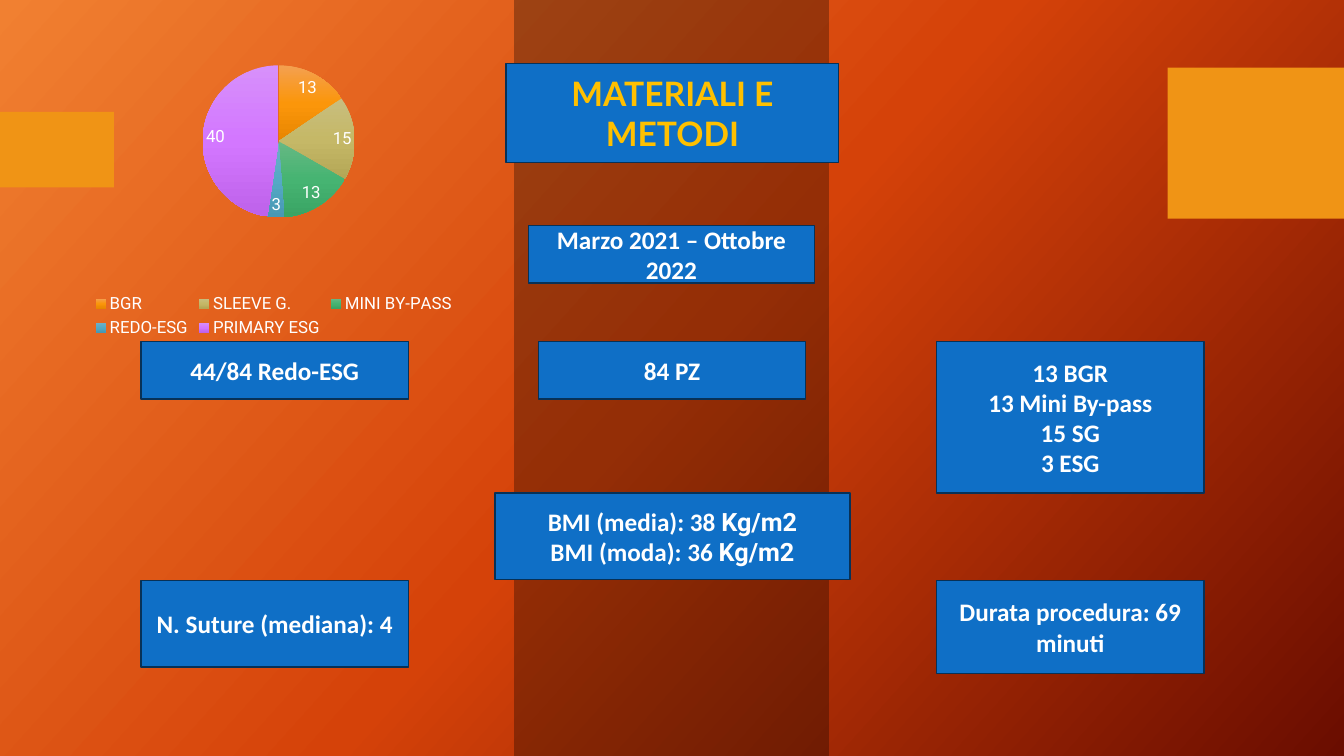
from dataclasses import dataclass
from typing import Any

from lxml.etree import SubElement
from pptx import Presentation
from pptx.chart.data import CategoryChartData
from pptx.dml.color import RGBColor
from pptx.dml.fill import FillFormat
from pptx.enum.chart import XL_CHART_TYPE as ChartType
from pptx.enum.chart import XL_LABEL_POSITION as LabelPosition
from pptx.enum.chart import XL_LEGEND_POSITION as LegendPosition
from pptx.enum.shapes import MSO_SHAPE as ShapeKind
from pptx.enum.text import MSO_ANCHOR as Anchor
from pptx.enum.text import PP_ALIGN as Align
from pptx.oxml import parse_xml
from pptx.oxml.ns import nsdecls, qn
from pptx.shapes.autoshape import Shape
from pptx.slide import Slide
from pptx.text.text import Font
from pptx.util import Inches, Pt

BLACK = RGBColor(0x00, 0x00, 0x00)
WHITE = RGBColor(0xFF, 0xFF, 0xFF)
GOLD = RGBColor(0xFF, 0xC0, 0x00)
ORANGE = RGBColor(0xF0, 0x94, 0x15)
BLUE = RGBColor(0x0F, 0x6F, 0xC6)
NAVY = RGBColor(0x07, 0x31, 0x57)
BACKGROUND = (
    RGBColor(0xF1, 0x80, 0x31), RGBColor(0xD5, 0x42, 0x09), RGBColor(0x6A, 0x0D, 0x00),
)

SLIDE_WIDTH, SLIDE_HEIGHT = 13.33, 7.5
LEFT_COLUMN, RIGHT_COLUMN, BOX_WIDTH = 1.4, 9.29, 2.65
CENTRE_ROW, BOTTOM_ROW = 3.39, 5.76

BODY = {"name": "Calibri", "size": Pt(18), "bold": True}
UNIT = BODY | {"name": "Roboto"}
TITLE = {"name": "Lato", "size": Pt(24), "bold": True}
CHART_TEXT = {"name": "Roboto", "size": Pt(12)}

Gradient = tuple[RGBColor, RGBColor, RGBColor]


@dataclass(frozen=True)
class Area:
    left: float
    top: float
    width: float
    height: float

    def lengths(self) -> list[Inches]:
        return [Inches(n) for n in (self.left, self.top, self.width, self.height)]


@dataclass(frozen=True)
class Box:
    area: Area
    lines: tuple[str, ...]
    unit: str = ""
    font: Any = None
    color: RGBColor = WHITE


@dataclass(frozen=True)
class Slice:
    name: str
    patients: int
    gradient: Gradient


BOXES = (
    Box(Area(5.02, 0.63, 3.3, 0.98), ("MATERIALI E METODI",), font=TITLE, color=GOLD),
    Box(Area(5.34, CENTRE_ROW, BOX_WIDTH, 0.57), ("84 PZ",)),
    Box(Area(LEFT_COLUMN, BOTTOM_ROW, BOX_WIDTH, 0.86), ("N. Suture (mediana): 4",)),
    Box(Area(RIGHT_COLUMN, BOTTOM_ROW, BOX_WIDTH, 0.92), ("Durata procedura: 69 minuti",)),
    Box(Area(4.91, 4.89, 3.52, 0.86), ("BMI (media): 38 ", "BMI (moda): 36 "), unit="Kg/m2"),
    Box(
        Area(RIGHT_COLUMN, CENTRE_ROW, BOX_WIDTH, 1.5),
        ("13 BGR", "13 Mini By-pass", "15 SG", "3 ESG"),
    ),
    Box(Area(LEFT_COLUMN, CENTRE_ROW, BOX_WIDTH, 0.57), ("44/84 Redo-ESG",)),
    Box(Area(5.24, 2.24, 2.84, 0.57), ("Marzo 2021 – Ottobre 2022",)),
)

SLICES = (
    Slice("BGR", 13, (
        RGBColor(0xF4, 0xA0, 0x50), RGBColor(0xFB, 0x96, 0x0A), RGBColor(0xE8, 0x86, 0x00))),
    Slice("SLEEVE G.", 15, (
        RGBColor(0xC8, 0xBE, 0x7F), RGBColor(0xC5, 0xB8, 0x67), RGBColor(0xB4, 0xA7, 0x56))),
    Slice("MINI BY-PASS", 13, (
        RGBColor(0x67, 0xB8, 0x84), RGBColor(0x46, 0xB4, 0x72), RGBColor(0x3A, 0xA4, 0x64))),
    Slice("REDO-ESG", 3, (
        RGBColor(0x71, 0xB0, 0xC8), RGBColor(0x55, 0xA9, 0xC5), RGBColor(0x47, 0x98, 0xB4))),
    Slice("PRIMARY ESG", 40, (
        RGBColor(0xD7, 0x90, 0xFB), RGBColor(0xD3, 0x77, 0xFF), RGBColor(0xBE, 0x62, 0xEA))),
)


def set_font(font: Font, values: dict[str, Any], color: RGBColor = WHITE) -> None:
    for name, value in values.items():
        setattr(font, name, value)
    font.color.rgb = color


def set_gradient(fill: FillFormat, owner: Any, colors: Gradient, angle: int) -> None:
    fill.gradient()
    fill.gradient_angle = 360 - angle
    stops = owner.findall(".//" + qn("a:gsLst"))[-1]
    for stop in list(stops):
        stops.remove(stop)
    for position, color in zip((0, 50000, 100000), colors):
        stop = SubElement(stops, qn("a:gs"), pos=str(position))
        SubElement(stop, qn("a:srgbClr"), val=str(color))


def add_rectangle(slide: Slide, area: Area, color: RGBColor) -> Shape:
    shape = slide.shapes.add_shape(ShapeKind.RECTANGLE, *area.lengths())
    shape.shadow.inherit = False
    shape.fill.solid()
    shape.fill.fore_color.rgb = color
    shape.line.fill.background()
    return shape


def add_backdrop(slide: Slide) -> None:
    set_gradient(slide.background.fill, slide.element, BACKGROUND, 42)
    band = add_rectangle(slide, Area(5.1, 0, 3.12, SLIDE_HEIGHT), BLACK)
    color = band.element.spPr.find(".//" + qn("a:srgbClr"))
    SubElement(color, qn("a:alpha"), val="30000")
    for area in (Area(0, 1.11, 1.13, 0.75), Area(11.58, 0.67, 1.75, 1.5)):
        add_rectangle(slide, area, ORANGE)


def add_box(slide: Slide, box: Box) -> None:
    shape = add_rectangle(slide, box.area, BLUE)
    shape.line.color.rgb = NAVY
    shape.line.width = Pt(1)
    frame = shape.text_frame
    frame.word_wrap = True
    frame.vertical_anchor = Anchor.MIDDLE
    for index, line in enumerate(box.lines):
        paragraph = frame.add_paragraph() if index else frame.paragraphs[0]
        paragraph.alignment = Align.CENTER
        for text, font in ((line, box.font or BODY), (box.unit, UNIT)):
            if text:
                run = paragraph.add_run()
                run.text = text
                set_font(run.font, font, box.color)


def add_pie(slide: Slide) -> None:
    data = CategoryChartData()
    data.categories = [part.name for part in SLICES]
    data.add_series("Series 1", [part.patients for part in SLICES])
    area = Area(0.25, 0.31, 4.93, 3.08)
    chart = slide.shapes.add_chart(ChartType.PIE, *area.lengths(), data).chart
    chart.has_title = False
    set_font(chart.font, CHART_TEXT | {"size": Pt(10)})
    chart.has_legend = True
    chart.legend.position = LegendPosition.BOTTOM
    chart.legend.include_in_layout = False
    set_font(chart.legend.font, CHART_TEXT)

    plot = chart.plots[0]
    plot.vary_by_categories = True
    for index, part in enumerate(SLICES):
        point = plot.series[0].points[index]
        set_gradient(point.format.fill, chart.element, part.gradient, 90)
        point.format.line.fill.background()
    labels = plot.series[0].data_labels
    labels.show_value = True
    labels.position = LabelPosition.BEST_FIT
    set_font(labels.font, CHART_TEXT)

    plot_area = chart.element.find(".//" + qn("c:plotArea"))
    for layout in plot_area.findall(qn("c:layout")):
        plot_area.remove(layout)
    settings = {
        "layoutTarget": "inner", "xMode": "edge", "yMode": "edge",
        "x": 0.35, "y": 0.11, "w": 0.32, "h": 0.49,
    }
    values = "".join(f'<c:{name} val="{value}"/>' for name, value in settings.items())
    plot_area.insert(0, parse_xml(
        f"<c:layout {nsdecls('c')}><c:manualLayout>{values}</c:manualLayout></c:layout>"
    ))


def main() -> None:
    """Build the materials and methods slide."""
    presentation = Presentation()
    presentation.slide_width = Inches(SLIDE_WIDTH)
    presentation.slide_height = Inches(SLIDE_HEIGHT)
    slide = presentation.slides.add_slide(presentation.slide_layouts[6])
    add_backdrop(slide)
    for box in BOXES:
        add_box(slide, box)
    add_pie(slide)
    presentation.save("out.pptx")


if __name__ == "__main__":
    main()
